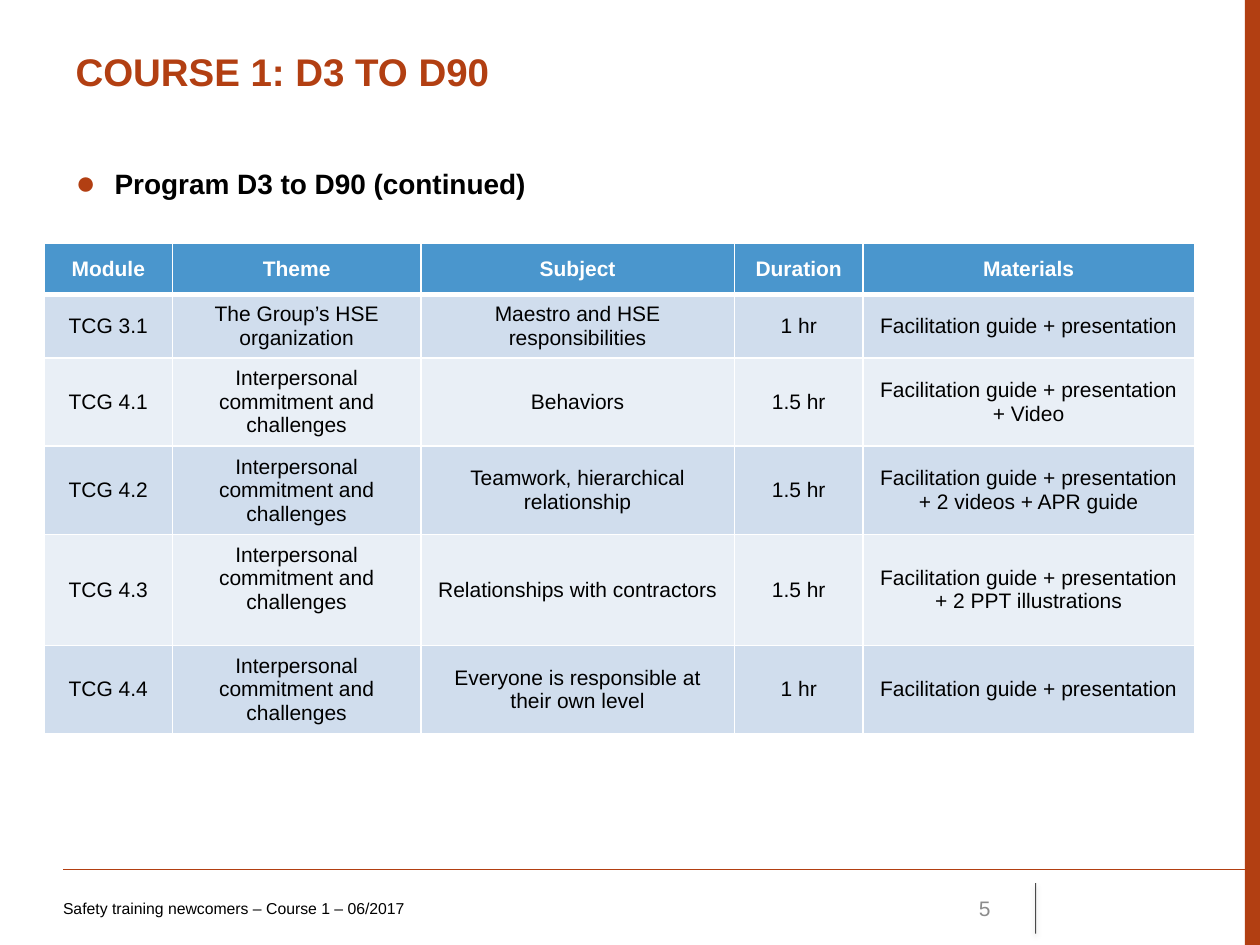
"""Build the course 1 programme slide with its table of modules."""
from lxml.etree import SubElement
from pptx import Presentation
from pptx.dml.color import RGBColor
from pptx.enum.shapes import MSO_CONNECTOR, MSO_SHAPE
from pptx.enum.text import MSO_ANCHOR, MSO_AUTO_SIZE, PP_ALIGN
from pptx.oxml import parse_xml
from pptx.oxml.ns import nsdecls, qn
from pptx.util import Inches, Pt

RUST = RGBColor(0xB2, 0x3F, 0x12)
BLACK = RGBColor(0, 0, 0)
WHITE = RGBColor(0xFF, 0xFF, 0xFF)
GREY = RGBColor(0x8C, 0x8C, 0x8C)
HEADER_BLUE = RGBColor(0x4A, 0x96, 0xCD)
BAND_DARK = RGBColor(0xD0, 0xDD, 0xED)
BAND_LIGHT = RGBColor(0xE9, 0xEF, 0xF6)

HEADERS = ["Module", "Theme", "Subject", "Duration", "Materials"]
CHALLENGES = "Interpersonal commitment and challenges"
GUIDE = "Facilitation guide + presentation"
MODULES = [
    ["TCG 3.1", "The Group’s HSE organization", "Maestro and HSE responsibilities", "1 hr", GUIDE],
    ["TCG 4.1", CHALLENGES, "Behaviors", "1.5 hr", GUIDE + " + Video"],
    ["TCG 4.2", CHALLENGES, "Teamwork, hierarchical relationship", "1.5 hr",
     GUIDE + " + 2 videos + APR guide"],
    ["TCG 4.3", CHALLENGES, "Relationships with contractors", "1.5 hr",
     GUIDE + " + 2 PPT illustrations"],
    ["TCG 4.4", CHALLENGES, "Everyone is responsible at their own level", "1 hr", GUIDE],
]
COLUMN_WIDTHS = [1.02, 1.97, 2.49, 1.02, 2.63]
ROW_HEIGHTS = [0.41, 0.47, 0.66, 0.66, 0.85, 0.66]


def add_text(paragraph, text, size, color, bold=False, align=PP_ALIGN.LEFT):
    paragraph.alignment = align
    run = paragraph.add_run()
    run.text = text
    run.font.name = "Arial"
    run.font.size = Pt(size)
    run.font.bold = bold
    run.font.color.rgb = color


def add_border(cell, side, points):
    line = SubElement(cell._tc.get_or_add_tcPr(), qn(f"a:ln{side}"), w=str(Pt(points)))
    fill = SubElement(line, qn("a:solidFill"))
    SubElement(fill, qn("a:srgbClr"), val=str(WHITE))


presentation = Presentation()
presentation.slide_width = Inches(10)
presentation.slide_height = Inches(7.5)
slide = presentation.slides.add_slide(presentation.slide_layouts[1])
shapes = slide.shapes

side_bar = shapes.add_shape(MSO_SHAPE.RECTANGLE, Inches(9.88), 0, Inches(0.12), Inches(7.5))
side_bar.shadow.inherit = False
side_bar.fill.solid()
side_bar.fill.fore_color.rgb = RUST
side_bar.line.fill.background()

footer_rule = shapes.add_connector(
    MSO_CONNECTOR.STRAIGHT, Inches(0.5), Inches(6.9), Inches(10), Inches(6.9))
footer_rule.line.color.rgb = RUST
footer_rule.line.width = Pt(0.75)
SubElement(footer_rule._element.spPr, qn("a:effectLst"))

number_divider = shapes.add_connector(
    MSO_CONNECTOR.STRAIGHT, Inches(8.22), Inches(7.01), Inches(8.22), Inches(7.41))
number_divider.line.color.rgb = BLACK
number_divider.line.width = Pt(0.5)
divider_color = number_divider._element.spPr.find(".//" + qn("a:srgbClr"))
SubElement(divider_color, qn("a:alpha"), val="70000")
number_divider._element.spPr.append(parse_xml(
    f'<a:effectLst {nsdecls("a")}><a:outerShdw blurRad="{Pt(3.1)}" dist="{Pt(1.6)}" dir="5400000">'
    '<a:srgbClr val="000000"><a:alpha val="38000"/></a:srgbClr></a:outerShdw></a:effectLst>'))

title = shapes.title
body = slide.placeholders[1]
for placeholder, top, height, margin in [(title, 0.3, 0.69, 0.08), (body, 1.23, 0.47, 0.09)]:
    placeholder.left, placeholder.top = Inches(0.5), Inches(top)
    placeholder.width, placeholder.height = Inches(8.99), Inches(height)
    frame = placeholder.text_frame
    frame.auto_size = MSO_AUTO_SIZE.NONE
    frame.vertical_anchor = MSO_ANCHOR.TOP
    frame.margin_top = Inches(margin)
add_text(title.text_frame.paragraphs[0], "COURSE 1: D3 TO D90", 22, RUST, bold=True)

bullet = body.text_frame.paragraphs[0]
bullet.space_before = Pt(0)
bullet.space_after = Pt(3)
properties = bullet._p.get_or_add_pPr()
properties.set("marL", str(Inches(0.31)))
properties.set("indent", str(-Inches(0.31)))
bullet_color = SubElement(properties, qn("a:buClr"))
SubElement(bullet_color, qn("a:srgbClr"), val=str(RUST))
SubElement(properties, qn("a:buSzPct"), val="120000")
SubElement(properties, qn("a:buFont"), typeface="Arial")
SubElement(properties, qn("a:buChar"), char="●")
add_text(bullet, "Program D3 to D90 (continued)", 16, BLACK, bold=True)

for left, width, margin, text, size, color, align in [
    (0.5, 6.08, 0, "Safety training newcomers – Course 1 – 06/2017", 9, BLACK, PP_ALIGN.LEFT),
    (7.17, 0.79, 0.1, "5", 12, GREY, PP_ALIGN.RIGHT),
]:
    footer = shapes.add_textbox(Inches(left), Inches(7.01), Inches(width), Inches(0.4))
    frame = footer.text_frame
    frame.word_wrap = True
    frame.vertical_anchor = MSO_ANCHOR.MIDDLE
    frame.margin_left = Inches(margin)
    add_text(frame.paragraphs[0], text, size, color, align=align)

table = shapes.add_table(
    len(ROW_HEIGHTS), len(COLUMN_WIDTHS), Inches(0.35), Inches(1.93),
    Inches(sum(COLUMN_WIDTHS)), Inches(sum(ROW_HEIGHTS))).table
for column, width in zip(table.columns, COLUMN_WIDTHS):
    column.width = Inches(width)
for row, height in zip(table.rows, ROW_HEIGHTS):
    row.height = Inches(height)

for row_index, values in enumerate([HEADERS] + MODULES):
    is_header = row_index == 0
    band = HEADER_BLUE if is_header else BAND_DARK if row_index % 2 else BAND_LIGHT
    for column_index, text in enumerate(values):
        cell = table.cell(row_index, column_index)
        cell.vertical_anchor = MSO_ANCHOR.MIDDLE
        add_border(cell, "L", 1)
        add_border(cell, "R", 1)
        add_border(cell, "T", 3 if row_index == 1 else 1)
        add_border(cell, "B", 3 if is_header else 1)
        cell.fill.solid()
        cell.fill.fore_color.rgb = band
        add_text(cell.text_frame.paragraphs[0], text, 12, WHITE if is_header else BLACK,
                 bold=is_header, align=PP_ALIGN.CENTER)
table.cell(4, 1).margin_bottom = Inches(0.23)

presentation.save("out.pptx")
